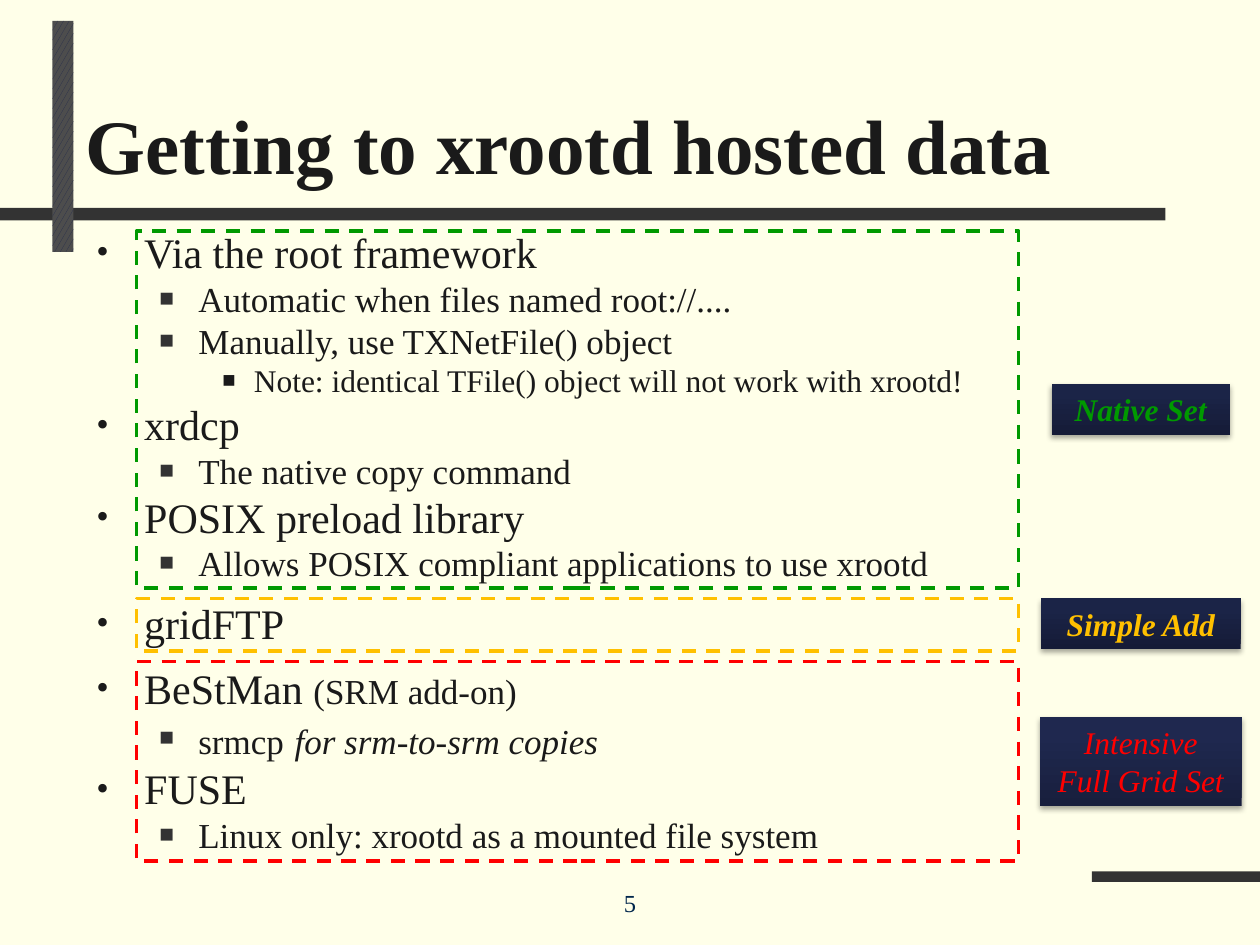
import pptx
import pptx.util
import pptx.dml.color
import pptx.enum.dml
import pptx.enum.shapes
import pptx.enum.text
import pptx.oxml

THEME = {
    "font": "Times New Roman",
    "color": {"background": "FFFFE9", "ink": "1A1A1A", "bar": "333333", "number": "00264C",
              "weave": "262D4C", "weave_back": "4D4D4D",
              "native": "009900", "simple": "FFC000", "grid": "FF0000"},
    "size": {"title": 44, "levels": (24, 20, 18), "label": 18, "number": 14},
    "gradient": {"dark": ("151B37", "1B2447", "1A2348"), "soft": ("181F3D", "1F284F", "1F2850")},
}
COLOR, SIZE = THEME["color"], THEME["size"]
COLUMNS, ROWS = 120, 90
NAMESPACE = 'xmlns:a="http://schemas.openxmlformats.org/drawingml/2006/main"'
RECTANGLE = pptx.enum.shapes.MSO_SHAPE.RECTANGLE
CENTER = pptx.enum.text.PP_ALIGN.CENTER
BOTTOM = pptx.enum.text.MSO_ANCHOR.BOTTOM
rgb = pptx.dml.color.RGBColor.from_string

presentation = pptx.Presentation()
presentation.slide_width = pptx.util.Inches(10)
presentation.slide_height = pptx.util.Inches(7.5)
slide = presentation.slides.add_slide(presentation.slide_layouts[6])
slide.background.fill.solid()
slide.background.fill.fore_color.rgb = rgb(COLOR["background"])


def add_box(left, top, width, height, text_box=False):
    """Add a bare rectangle or a text box, placed in grid columns and rows."""
    column, row = presentation.slide_width / COLUMNS, presentation.slide_height / ROWS
    place = [round(n) for n in (left * column, top * row, width * column, height * row)]
    if text_box:
        shape = slide.shapes.add_textbox(*place)
        shape.text_frame.word_wrap = True
        return shape
    shape = slide.shapes.add_shape(RECTANGLE, *place)
    shape.shadow.inherit = False
    shape.fill.background()
    shape.line.fill.background()
    return shape


def add_run(paragraph, text, color, **font_format):
    run = paragraph.add_run()
    run.text = text
    run.font.color.rgb = rgb(color)
    for name, value in {"name": THEME["font"], **font_format}.items():
        setattr(run.font, name, pptx.util.Pt(value) if name == "size" else value)


# Bars behind the title
for place in ((0, 19.8, 111, 1.2), (104, 83, 16, 1)):
    bar = add_box(*place)
    bar.fill.solid()
    bar.fill.fore_color.rgb = rgb(COLOR["bar"])
woven_bar = add_box(5, 2, 2, 22)
woven_bar.fill.patterned()
woven_bar.fill.pattern = pptx.enum.dml.MSO_PATTERN.LARGE_CONFETTI
woven_bar.fill.fore_color.rgb = rgb(COLOR["weave"])
woven_bar.fill.back_color.rgb = rgb(COLOR["weave_back"])

# Slide number and title
number = add_box(41, 85, 38, 3, text_box=True)
number.text_frame.vertical_anchor = BOTTOM
number.text_frame.paragraphs[0].alignment = CENTER
add_run(number.text_frame.paragraphs[0], "5", COLOR["number"], size=SIZE["number"])
title = add_box(7, 3.7, 112, 15, text_box=True)
title.text_frame.vertical_anchor = BOTTOM
add_run(title.text_frame.paragraphs[0], "Getting to xrootd hosted data", COLOR["ink"],
        size=SIZE["title"], bold=True)

# Bulleted outline: level, then runs of text with their own format
outline = [
    (0, [("Via the root framework", {})]),
    (1, [("Automatic when files named root://....", {})]),
    (1, [("Manually, use TXNetFile() object", {})]),
    (2, [("Note: identical TFile() object will not work with xrootd!", {})]),
    (0, [("xrdcp", {})]),
    (1, [("The native copy command", {})]),
    (0, [("POSIX preload library", {})]),
    (1, [("Allows POSIX compliant applications to use xrootd", {})]),
    (0, [("gridFTP", {})]),
    (0, [("BeStMan ", {}), ("(SRM add-on)", {"size": SIZE["levels"][1]})]),
    (1, [("srmcp", {}), (" ", {"size": SIZE["levels"][0]}),
         ("for srm-to-srm copies", {"italic": True})]),
    (0, [("FUSE", {})]),
    (1, [("Linux only: xrootd as a mounted file system", {})]),
]
# Left margin and hanging indent in inches, bullet colour, bullet percent, bullet
levels = [(0.38, 0.38, "ink", 85, "•"), (0.81, 0.31, "bar", 70, "■"), (1.25, 0.25, "ink", 70, "■")]
body = add_box(8, 21, 108, 67, text_box=True).text_frame
for index, (level, runs) in enumerate(outline):
    paragraph = body.paragraphs[0] if index == 0 else body.add_paragraph()
    margin, hanging, bullet_color, percent, bullet = levels[level]
    properties = paragraph._p.get_or_add_pPr()
    properties.set("marL", str(pptx.util.Inches(margin)))
    properties.set("indent", str(-pptx.util.Inches(hanging)))
    for element in (f'<a:buClr {NAMESPACE}><a:srgbClr val="{COLOR[bullet_color]}"/></a:buClr>',
                    f'<a:buSzPct {NAMESPACE} val="{percent * 1000}"/>',
                    f'<a:buFont {NAMESPACE} typeface="{THEME["font"]}"/>',
                    f'<a:buChar {NAMESPACE} char="{bullet}"/>'):
        properties.append(pptx.oxml.parse_xml(element))
    paragraph.level = level
    gap = pptx.util.Pt(8 if runs[0][0] == "gridFTP" else 0)
    paragraph.space_before = paragraph.space_after = gap
    for text, font_format in runs:
        add_run(paragraph, text, COLOR["ink"], **{"size": SIZE["levels"][level], **font_format})

# Dashed frames around the groups of the outline
for name, top, height in (("native", 22, 34), ("grid", 63, 19), ("simple", 57, 5)):
    frame = add_box(13, top, 84, height)
    frame.line.color.rgb = rgb(COLOR[name])
    frame.line.width = pptx.util.Pt(2)
    frame.line.dash_style = pptx.enum.dml.MSO_LINE.DASH

# Shaded labels, centred on one column
LABEL_CENTER = 108.65
labels = [
    ("native", 36.6, 17, 4.8, "dark", True, ["Native Set"]),
    ("simple", 57, 19, 4.8, "dark", True, ["Simple Add"]),
    ("grid", 68.3, 19.2, 8.5, "soft", False, ["Intensive", "Full Grid Set"]),
]
for name, top, width, height, shade, bold, lines in labels:
    label = add_box(LABEL_CENTER - width / 2, top, width, height)
    properties = label._element.spPr
    stops = "".join(f'<a:gs pos="{position}"><a:srgbClr val="{color}"/></a:gs>'
                    for position, color in zip((0, 80000, 100000), THEME["gradient"][shade]))
    gradient = pptx.oxml.parse_xml(
        f'<a:gradFill {NAMESPACE} rotWithShape="1"><a:gsLst>{stops}</a:gsLst>'
        '<a:lin ang="16200000" scaled="0"/></a:gradFill>')
    properties.replace(properties.find(pptx.oxml.ns.qn("a:noFill")), gradient)
    properties.find(pptx.oxml.ns.qn("a:effectLst")).append(pptx.oxml.parse_xml(
        f'<a:outerShdw {NAMESPACE} blurRad="40000" dist="23000" dir="5400000" rotWithShape="0">'
        '<a:srgbClr val="000000"><a:alpha val="35000"/></a:srgbClr></a:outerShdw>'))
    frame = label.text_frame
    frame.word_wrap = False
    frame.auto_size = pptx.enum.text.MSO_AUTO_SIZE.SHAPE_TO_FIT_TEXT
    frame.vertical_anchor = pptx.enum.text.MSO_ANCHOR.TOP
    for index, line in enumerate(lines):
        paragraph = frame.paragraphs[0] if index == 0 else frame.add_paragraph()
        paragraph.alignment = CENTER
        add_run(paragraph, line, COLOR[name], size=SIZE["label"], bold=bold, italic=True)

presentation.save("out.pptx")
